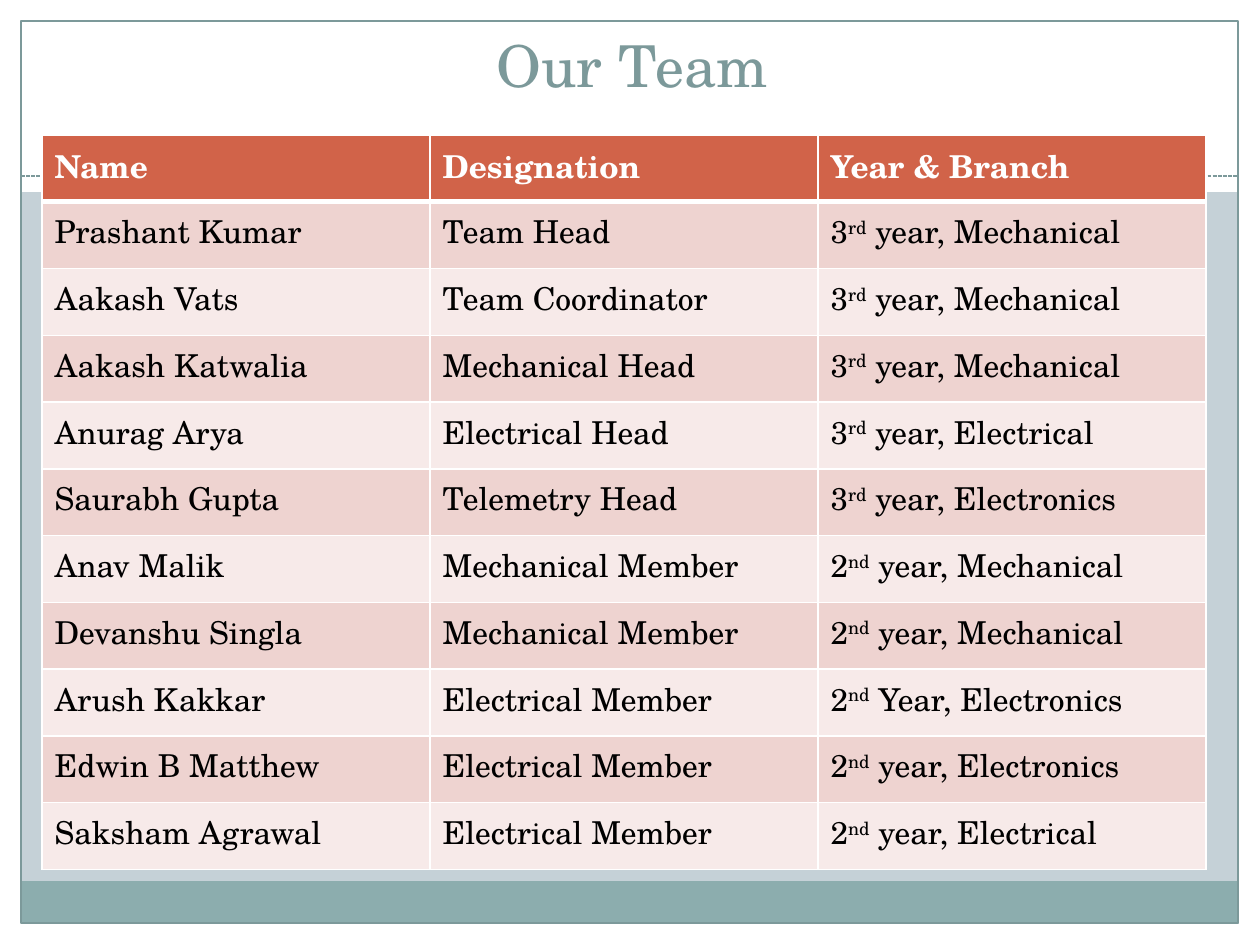
from dataclasses import dataclass

import pptx
import pptx.dml.color
import pptx.enum.dml
import pptx.enum.shapes
import pptx.enum.text
import pptx.oxml
import pptx.oxml.ns
import pptx.util
from pptx.dml.color import RGBColor

PX_PER_INCH = 126
FONT = "TeX Gyre Schola"
WHITE = RGBColor(0xFF, 0xFF, 0xFF)
BLACK = RGBColor(0x00, 0x00, 0x00)
BACKDROP = RGBColor(0xC5, 0xD1, 0xD7)
TEAL = RGBColor(0x8C, 0xAD, 0xAE)
DARK_TEAL = RGBColor(0x7C, 0x99, 0x9A)
HEADER = RGBColor(0xD1, 0x63, 0x49)
BANDS = (RGBColor(0xEE, 0xD3, 0xD0), RGBColor(0xF7, 0xEA, 0xE9))


@dataclass
class Panel:
    left: int
    top: int
    width: int
    height: int
    fill: RGBColor | None = None
    line: RGBColor | None = None


@dataclass
class Member:
    name: str
    designation: str
    branch: str  # text between carets is superscript


PANELS = [
    Panel(0, 924, 1260, 21, fill=WHITE),
    Panel(0, 0, 1260, 192, fill=WHITE),
    Panel(0, 0, 21, 945, fill=WHITE),
    Panel(1239, 0, 21, 945, fill=WHITE),
    Panel(21, 881, 1217, 43, fill=TEAL),
    Panel(21, 21, 1217, 902, line=DARK_TEAL),
]
HEADINGS = Member("Name", "Designation", "Year & Branch")
MEMBERS = [
    Member("Prashant Kumar", "Team Head", "3^rd^ year, Mechanical"),
    Member("Aakash Vats", "Team Coordinator", "3^rd^ year, Mechanical"),
    Member("Aakash Katwalia", "Mechanical Head", "3^rd^ year, Mechanical"),
    Member("Anurag Arya", "Electrical Head", "3^rd^ year, Electrical"),
    Member("Saurabh Gupta", "Telemetry Head", "3^rd^ year, Electronics"),
    Member("Anav Malik", "Mechanical Member", "2^nd^ year, Mechanical"),
    Member("Devanshu Singla", "Mechanical Member", "2^nd^ year, Mechanical"),
    Member("Arush Kakkar", "Electrical Member", "2^nd^ Year, Electronics"),
    Member("Edwin B Matthew", "Electrical Member", "2^nd^ year, Electronics"),
    Member("Saksham Agrawal", "Electrical Member", "2^nd^ year, Electrical"),
]


def px(length: int) -> pptx.util.Emu:
    return pptx.util.Emu(round(length * 914400 / PX_PER_INCH))


def write(frame, text: str, *, size: int, color: RGBColor, bold: bool = False,
          align=pptx.enum.text.PP_ALIGN.LEFT) -> None:
    paragraph = frame.paragraphs[0]
    paragraph.alignment = align
    for index, part in enumerate(text.split("^")):
        run = paragraph.add_run()
        run.text = part
        run.font.name = FONT
        run.font.size = pptx.util.Pt(size)
        run.font.bold = bold
        run.font.color.rgb = color
        if index % 2:
            run.font._element.set("baseline", "30000")


def draw_panel(slide, panel: Panel) -> None:
    shape = slide.shapes.add_shape(
        pptx.enum.shapes.MSO_SHAPE.RECTANGLE,
        px(panel.left), px(panel.top), px(panel.width), px(panel.height))
    shape.shadow.inherit = False
    if panel.fill is None:
        shape.fill.background()
    else:
        shape.fill.solid()
        shape.fill.fore_color.rgb = panel.fill
    if panel.line is None:
        shape.line.fill.background()
    else:
        shape.line.color.rgb = panel.line
        shape.line.width = pptx.util.Pt(0.75)


def draw_divider(slide, left: int, right: int, y: int) -> None:
    divider = slide.shapes.add_connector(
        pptx.enum.shapes.MSO_CONNECTOR.STRAIGHT, px(left), px(y), px(right), px(y))
    divider.line.color.rgb = DARK_TEAL
    divider.line.width = pptx.util.Pt(0.75)
    divider.line.dash_style = pptx.enum.dml.MSO_LINE.SQUARE_DOT
    divider._element.spPr.append(pptx.oxml.parse_xml(
        f'<a:effectLst {pptx.oxml.ns.nsdecls("a")}/>'))


def set_borders(cell, widths: dict[str, int]) -> None:
    properties = cell._tc.get_or_add_tcPr()
    for index, (side, points) in enumerate(widths.items()):
        properties.insert(index, pptx.oxml.parse_xml(
            f'<a:{side} {pptx.oxml.ns.nsdecls("a")} w="{pptx.util.Pt(points)}">'
            f'<a:solidFill><a:srgbClr val="{WHITE}"/></a:solidFill></a:{side}>'))


def draw_team(slide, left: int, top: int, width: int, height: int) -> None:
    rows = [HEADINGS, *MEMBERS]
    team = slide.shapes.add_table(
        len(rows), 3, px(left), px(top), px(width), px(height)).table
    for r, member in enumerate(rows):
        heading = r == 0
        borders = {"lnL": 1, "lnR": 1, "lnT": 3 if r == 1 else 1,
                   "lnB": 3 if heading else 1}
        for c, text in enumerate((member.name, member.designation, member.branch)):
            cell = team.cell(r, c)
            cell.fill.solid()
            cell.fill.fore_color.rgb = HEADER if heading else BANDS[(r - 1) % 2]
            set_borders(cell, borders)
            write(cell.text_frame, text, size=18, bold=heading,
                  color=WHITE if heading else BLACK)


def main() -> None:
    deck = pptx.Presentation()
    deck.slide_width, deck.slide_height = px(1260), px(945)
    slide = deck.slides.add_slide(deck.slide_layouts[5])

    # Backdrop and frame
    slide.background.fill.solid()
    slide.background.fill.fore_color.rgb = BACKDROP
    for panel in PANELS:
        draw_panel(slide, panel)
    draw_divider(slide, 21, 1239, 176)

    # Title, brought in front of the frame
    title = slide.shapes.title
    title.left, title.top, title.width, title.height = px(44), px(0), px(1176), px(105)
    title.text_frame.auto_size = pptx.enum.text.MSO_AUTO_SIZE.NONE
    title.text_frame.vertical_anchor = pptx.enum.text.MSO_ANCHOR.BOTTOM
    write(title.text_frame, "Our Team", size=33, color=DARK_TEAL,
          align=pptx.enum.text.PP_ALIGN.CENTER)
    slide.shapes._spTree.append(title._element)

    # Team table
    draw_team(slide, 42, 135, 1164, 735)

    deck.save("out.pptx")


if __name__ == "__main__":
    main()
